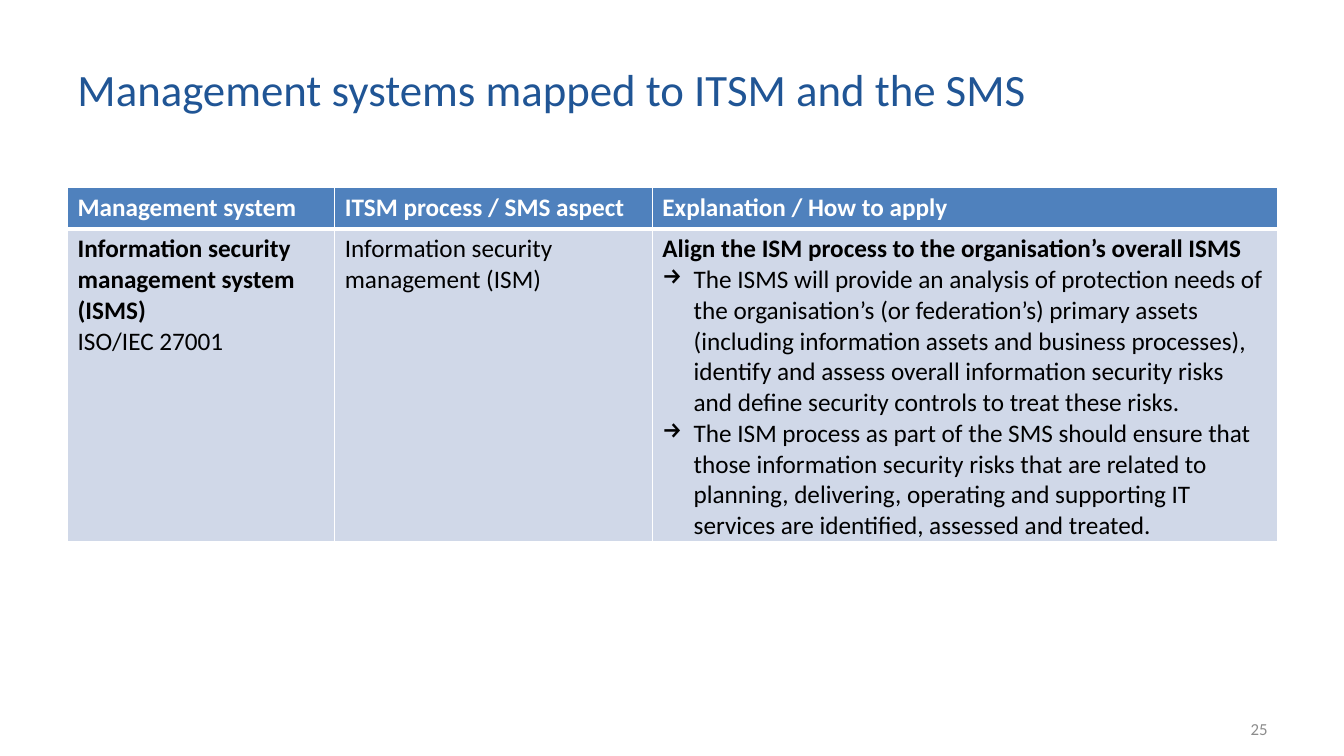
from dataclasses import dataclass

from lxml import etree
from pptx import Presentation
from pptx.dml.color import RGBColor
from pptx.enum.text import MSO_ANCHOR, PP_ALIGN
from pptx.oxml.ns import qn
from pptx.util import Inches, Pt

LEFT, RIGHT = PP_ALIGN.LEFT, PP_ALIGN.RIGHT
MIDDLE = MSO_ANCHOR.MIDDLE


@dataclass(frozen=True)
class Theme:
    font: str = "Calibri"
    title_size: int = 32
    table_size: int = 18
    number_size: int = 12
    title: str = "205595"
    number: str = "8C8C8C"
    header_fill: str = "4F81BD"
    body_fill: str = "D0D8E8"
    white: str = "FFFFFF"
    black: str = "000000"
    thin_line: int = 1
    thick_line: int = 3


@dataclass(frozen=True)
class Line:
    """One paragraph of a table cell."""
    text: str
    bold: bool = False
    arrow: bool = False


HEADERS = ["Management system", "ITSM process / SMS aspect", "Explanation / How to apply"]
BODY = [
    [Line("Information security management system (ISMS)", bold=True),
     Line("ISO/IEC 27001")],
    [Line("Information security management (ISM)")],
    [Line("Align the ISM process to the organisation’s overall ISMS", bold=True),
     Line("The ISMS will provide an analysis of protection needs of the organisation’s "
          "(or federation’s) primary assets (including information assets and business "
          "processes), identify and assess overall information security risks and define "
          "security controls to treat these risks.", arrow=True),
     Line("The ISM process as part of the SMS should ensure that those information "
          "security risks that are related to planning, delivering, operating and "
          "supporting IT services are identified, assessed and treated.", arrow=True)],
]
COLUMN_WIDTHS = [2.65, 3.15, 6.2]
ROW_HEIGHTS = [0.41, 3.1]


class SlideBuilder:
    def __init__(self, slide, theme):
        self.slide = slide
        self.theme = theme

    def add_run(self, paragraph, text, size, color, bold=False):
        run = paragraph.add_run()
        run.text = text
        run.font.name = self.theme.font
        run.font.size = Pt(size)
        run.font.bold = bold
        run.font.color.rgb = RGBColor.from_string(color)

    def add_text(self, left, top, width, height, text, size, color, alignment=LEFT):
        box = self.slide.shapes.add_textbox(
            Inches(left), Inches(top), Inches(width), Inches(height))
        frame = box.text_frame
        frame.word_wrap = True
        frame.vertical_anchor = MIDDLE
        paragraph = frame.paragraphs[0]
        paragraph.alignment = alignment
        self.add_run(paragraph, text, size, color)

    def add_arrow_bullet(self, paragraph):
        properties = paragraph._p.get_or_add_pPr()
        properties.set("marL", str(Inches(0.31)))
        properties.set("indent", str(-Inches(0.31)))
        etree.SubElement(properties, qn("a:buChar"), char="→")

    def add_borders(self, cell, top, bottom):
        """Draw white cell borders; must run before the cell fill is set."""
        properties = cell._tc.get_or_add_tcPr()
        thin = self.theme.thin_line
        for side, width in zip("LRTB", (thin, thin, top, bottom)):
            border = etree.SubElement(properties, qn(f"a:ln{side}"), w=str(Pt(width)))
            fill = etree.SubElement(border, qn("a:solidFill"))
            etree.SubElement(fill, qn("a:srgbClr"), val=self.theme.white)

    def fill_cell(self, cell, lines, fill, color, top, bottom):
        self.add_borders(cell, top, bottom)
        cell.fill.solid()
        cell.fill.fore_color.rgb = RGBColor.from_string(fill)
        frame = cell.text_frame
        for index, line in enumerate(lines):
            paragraph = frame.add_paragraph() if index else frame.paragraphs[0]
            if line.arrow:
                self.add_arrow_bullet(paragraph)
            self.add_run(paragraph, line.text, self.theme.table_size, color, line.bold)

    def add_table(self, left, top, headers, body, column_widths, row_heights):
        theme = self.theme
        table = self.slide.shapes.add_table(
            len(row_heights), len(column_widths), Inches(left), Inches(top),
            Inches(sum(column_widths)), Inches(sum(row_heights))).table
        for row, height in zip(table.rows, row_heights):
            row.height = Inches(height)
        for index, width in enumerate(column_widths):
            table.columns[index].width = Inches(width)
            self.fill_cell(table.cell(0, index), [Line(headers[index], bold=True)],
                           theme.header_fill, theme.white,
                           theme.thin_line, theme.thick_line)
            self.fill_cell(table.cell(1, index), body[index],
                           theme.body_fill, theme.black,
                           theme.thick_line, theme.thin_line)


def main():
    presentation = Presentation()
    presentation.slide_width = Inches(13.33)
    presentation.slide_height = Inches(7.5)
    theme = Theme()
    slide = presentation.slides.add_slide(presentation.slide_layouts[6])
    builder = SlideBuilder(slide, theme)
    builder.add_text(0.67, 0.3, 9.91, 1.15, "Management systems mapped to ITSM and the SMS",
                     theme.title_size, theme.title)
    builder.add_table(0.67, 1.86, HEADERS, BODY, COLUMN_WIDTHS, ROW_HEIGHTS)
    builder.add_text(9.56, 7.03, 3.11, 0.4, "25", theme.number_size, theme.number, RIGHT)
    presentation.save("out.pptx")


if __name__ == "__main__":
    main()
